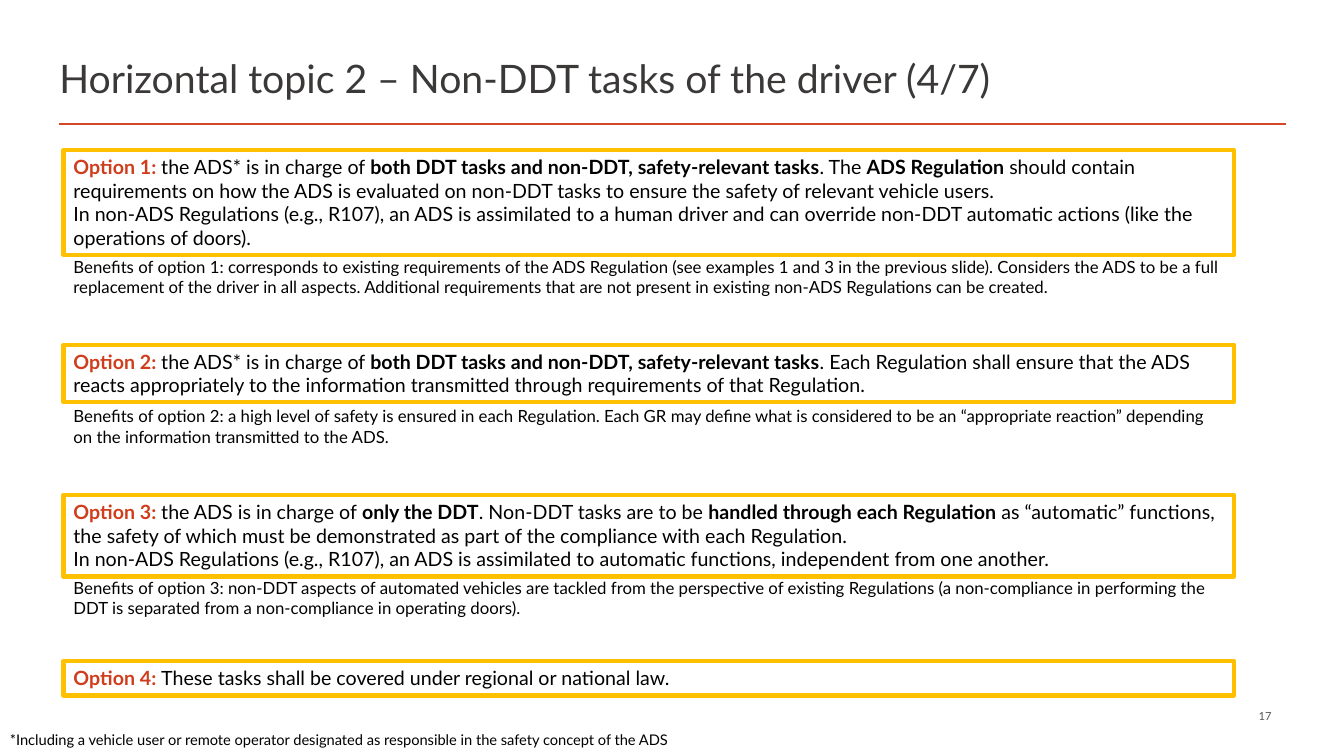
from pptx import Presentation
from pptx.dml.color import RGBColor
from pptx.enum import shapes, text
from pptx.oxml.ns import qn
from pptx.util import Inches, Pt
from lxml import etree

# Content: runs are (words, style)
TITLE = "Horizontal topic 2 – Non-DDT tasks of the driver (4/7)"
PAGE_NUMBER = "17"
FOOTNOTE = ("*Including a vehicle user or remote operator designated as responsible "
            "in the safety concept of the ADS")
BOTH_TASKS = ("both DDT tasks and non-DDT, safety-relevant tasks", "strong")

# Each option: box top, box height, paragraphs, benefits top, benefits
OPTIONS = [
    (1.49, 1.04, [
        [("Option 1: ", "label"), ("the ADS* is in charge of ", "body"), BOTH_TASKS,
         (". The ", "body"), ("ADS Regulation ", "strong"),
         ("should contain requirements on how the ADS is evaluated on non-DDT tasks "
          "to ensure the safety of relevant vehicle users.", "body")],
        [("In non-ADS Regulations (e.g., R107), an ADS is assimilated to a human driver "
          "and can override non-DDT automatic actions (like the operations of doors).", "body")],
    ], 2.5,
     "Benefits of option 1: corresponds to existing requirements of the ADS Regulation "
     "(see examples 1 and 3 in the previous slide). Considers the ADS to be a full "
     "replacement of the driver in all aspects. Additional requirements that are not "
     "present in existing non-ADS Regulations can be created."),
    (3.42, 0.57, [
        [("Option 2: ", "label"), ("the ADS* is in charge of ", "body"), BOTH_TASKS,
         (". Each Regulation shall ensure that the ADS reacts appropriately to the "
          "information transmitted through requirements of that Regulation.", "body")],
    ], 3.98,
     "Benefits of option 2: a high level of safety is ensured in each Regulation. Each GR "
     "may define what is considered to be an “appropriate reaction” depending on the "
     "information transmitted to the ADS."),
    (4.91, 0.81, [
        [("Option 3: ", "label"), ("the ADS is in charge of ", "body"),
         ("only the DDT", "strong"), (". Non-DDT tasks are to be ", "body"),
         ("handled through each Regulation ", "strong"),
         ("as “automatic” functions, the safety of which must be demonstrated as part of "
          "the compliance with each Regulation.", "body")],
        [("In non-ADS Regulations (e.g., R107), an ADS is assimilated to automatic "
          "functions, independent from one another.", "body")],
    ], 5.68,
     "Benefits of option 3: non-DDT aspects of automated vehicles are tackled from the "
     "perspective of existing Regulations (a non-compliance in performing the DDT is "
     "separated from a non-compliance in operating doors)."),
    (6.56, 0.34, [
        [("Option 4: ", "label"),
         ("These tasks shall be covered under regional or national law.", "body")],
    ], None, None),
]

# Theme: text styles are (size, colour, bold)
THEME = {
    "font": "Lato",
    "rule": "D24726",
    "frame": "FFC000",
    "styles": {
        "title": (28, "3B3838", False),
        "label": (14, "CF3D1C", True),
        "body": (14, "000000", False),
        "strong": (14, "000000", True),
        "benefits": (12, "000000", False),
        "footnote": (10.5, "000000", False),
        "page": (8, "595959", False),
    },
}
OPTION_LEFT, OPTION_WIDTH, BENEFITS_HEIGHT = 0.63, 11.61, 0.5


def write(frame, paragraphs, align=text.PP_ALIGN.LEFT, anchor=text.MSO_ANCHOR.TOP):
    frame.word_wrap = True
    frame.vertical_anchor = anchor
    for index, runs in enumerate(paragraphs):
        paragraph = frame.paragraphs[0] if index == 0 else frame.add_paragraph()
        paragraph.alignment = align
        for words, style in runs:
            run = paragraph.add_run()
            run.text = words
            size, colour, bold = THEME["styles"][style]
            run.font.name = THEME["font"]
            run.font.size = Pt(size)
            run.font.bold = bold
            run.font.color.rgb = RGBColor.from_string(colour)


def add_text(slide, place, words, style, **layout):
    label = slide.shapes.add_textbox(*map(Inches, place))
    write(label.text_frame, [[(words, style)]], **layout)
    return label


def add_option(slide, top, height, paragraphs):
    place = (OPTION_LEFT, top, OPTION_WIDTH, height)
    option = slide.shapes.add_shape(shapes.MSO_SHAPE.RECTANGLE, *map(Inches, place))
    option.shadow.inherit = False
    option.fill.background()
    option.line.color.rgb = RGBColor.from_string(THEME["frame"])
    option.line.width = Pt(3)
    write(option.text_frame, paragraphs)


def main():
    deck = Presentation()
    deck.slide_width, deck.slide_height = Inches(13.33), Inches(7.5)
    slide = deck.slides.add_slide(deck.slide_layouts[6])

    # Heading and rule
    rule = slide.shapes.add_connector(
        shapes.MSO_CONNECTOR.STRAIGHT, *map(Inches, (0.59, 1.23, 12.75, 1.23)))
    rule.line.color.rgb = RGBColor.from_string(THEME["rule"])
    rule.line.width = Pt(2)
    etree.SubElement(rule.line._ln.getparent(), qn("a:effectLst"))
    add_text(slide, (0.49, 0.47, 12.26, 0.61), TITLE, "title",
             anchor=text.MSO_ANCHOR.MIDDLE)

    # Options with their benefits
    for top, height, paragraphs, benefits_top, benefits in OPTIONS:
        add_option(slide, top, height, paragraphs)
        if benefits:
            add_text(slide, (OPTION_LEFT, benefits_top, OPTION_WIDTH, BENEFITS_HEIGHT),
                     benefits, "benefits")

    # Footer
    add_text(slide, (0, 7.2, 7.89, 0.28), FOOTNOTE, "footnote")
    page = add_text(slide, (9.13, 7.03, 3.58, 0.15), PAGE_NUMBER, "page",
                    align=text.PP_ALIGN.RIGHT, anchor=text.MSO_ANCHOR.MIDDLE)
    page.text_frame.margin_top = page.text_frame.margin_bottom = 0

    deck.save("out.pptx")


if __name__ == "__main__":
    main()
